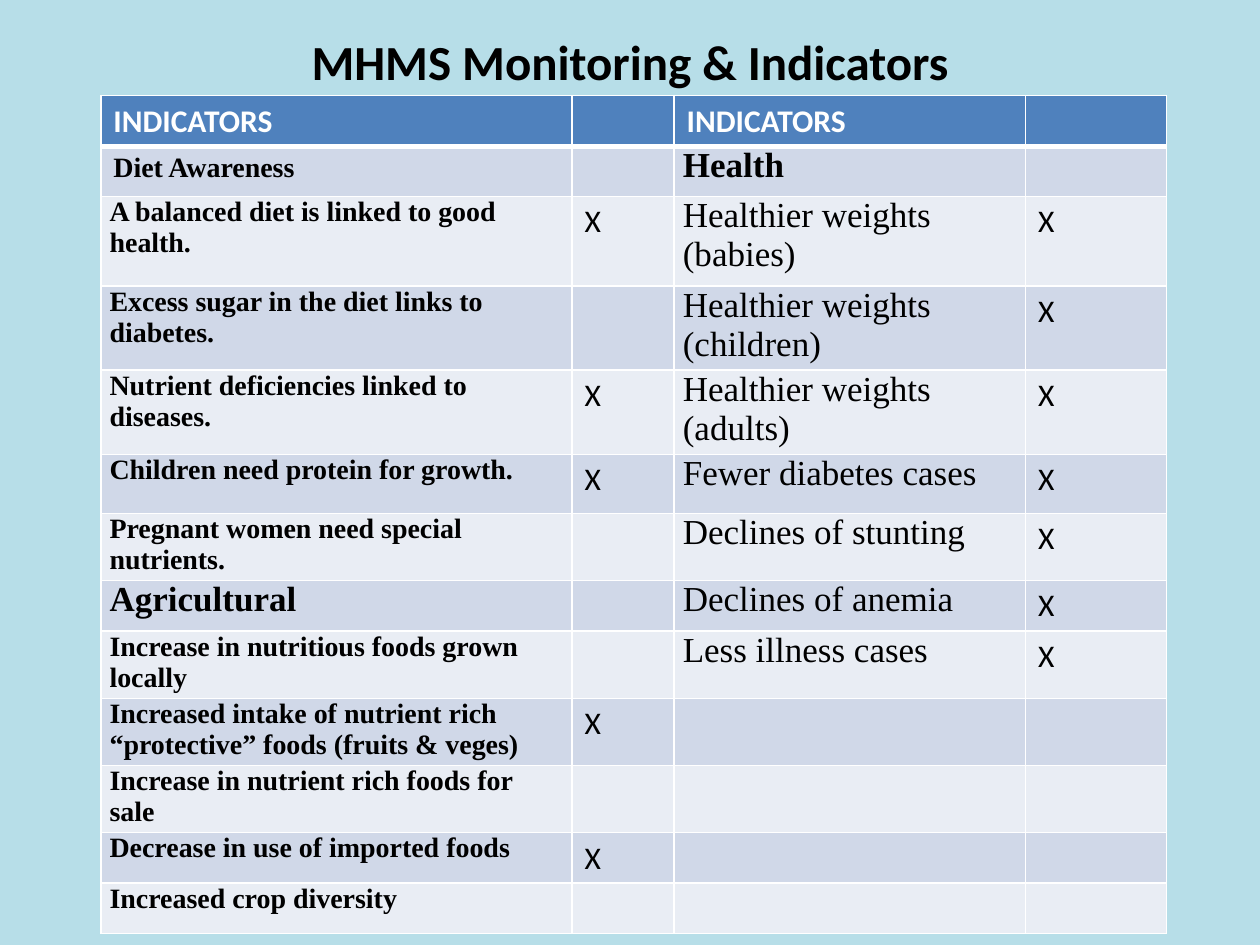
import pptx
import pptx.util
import pptx.dml.color
import pptx.enum.text
import pptx.oxml.ns
from lxml import etree
from pptx.util import Inches

COLORS = {"background": "B7DEE8", "header": "4F81BD", "odd": "D0D8E8",
          "even": "E9EDF4", "white": "FFFFFF", "black": "000000"}

# Text formats
TITLE = {"name": "Calibri", "size": 28, "bold": True, "color": "black"}
HEADER = {"name": "Calibri", "size": 18, "bold": True, "color": "white"}
MARK = {"name": "Calibri", "size": 18, "bold": False, "color": "black"}
PRACTICE = {"name": "Times New Roman", "size": 16, "bold": True, "color": "black"}
HEALTH = {"name": "Times New Roman", "size": 20, "bold": False, "color": "black"}
SECTION = {"name": "Times New Roman", "size": 20, "bold": True, "color": "black"}

COL_WIDTHS = [3.74, 0.81, 2.79, 1.12]
# Row height, then the four cell texts
ROWS = [
    (0.37, "INDICATORS", "", "INDICATORS", ""),
    (0.37, "Diet Awareness", "", "Health", ""),
    (0.71, "A balanced diet is linked to good health.", "X", "Healthier weights (babies)", "X"),
    (0.47, "Excess sugar in the diet links to diabetes.", "", "Healthier weights (children)", "X"),
    (0.47, "Nutrient deficiencies linked to diseases.", "X", "Healthier weights (adults)", "X"),
    (0.47, "Children need protein for growth.", "X", "Fewer diabetes cases", "X"),
    (0.47, "Pregnant women need special nutrients.", "", "Declines of stunting", "X"),
    (0.37, "Agricultural", "", "Declines of anemia", "X"),
    (0.37, "Increase in nutritious foods grown locally", "", "Less illness cases", "X"),
    (0.37, "Increased intake of nutrient rich “protective” foods (fruits & veges)", "X", "", ""),
    (0.37, "Increase in nutrient rich foods for sale", "", "", ""),
    (0.37, "Decrease in use of imported foods", "X", "", ""),
    (0.37, "Increased crop diversity", "", "", ""),
]


def rgb(name):
    return pptx.dml.color.RGBColor.from_string(COLORS[name])


def write_text(tf, text, fmt):
    p = tf.paragraphs[0]
    r = p.add_run()
    r.text = text
    for key, value in fmt.items():
        if key == "color":
            r.font.color.rgb = rgb(value)
        else:
            setattr(r.font, key, pptx.util.Pt(value) if key == "size" else value)
    return p


def add_title(s, text):
    tf = s.shapes.add_textbox(Inches(0.5), Inches(-0.14), Inches(9), Inches(1.25)).text_frame
    tf.word_wrap = True
    tf.vertical_anchor = pptx.enum.text.MSO_ANCHOR.MIDDLE
    p = write_text(tf, text, TITLE)
    p.alignment = pptx.enum.text.PP_ALIGN.CENTER


def set_borders(cell, widths):
    tcPr = cell._tc.get_or_add_tcPr()
    for side, width in widths.items():
        ln = etree.SubElement(tcPr, pptx.oxml.ns.qn(f"a:ln{side}"), w=str(pptx.util.Pt(width)))
        fill = etree.SubElement(ln, pptx.oxml.ns.qn("a:solidFill"))
        etree.SubElement(fill, pptx.oxml.ns.qn("a:srgbClr"), val=COLORS["white"])


def cell_format(row, col, text):
    if row == 0:
        return HEADER
    if col in (1, 3):
        return MARK
    if text in ("Health", "Agricultural"):
        return SECTION
    return PRACTICE if col == 0 else HEALTH


def fill_cell(cell, row, col, text):
    # Borders come before the fill; a thick rule separates the header
    set_borders(cell, {"L": 1, "R": 1, "T": 3 if row == 1 else 1, "B": 3 if row == 0 else 1})
    cell.fill.solid()
    cell.fill.fore_color.rgb = rgb("header" if row == 0 else "odd" if row % 2 else "even")
    if not text:
        return
    fmt = cell_format(row, col, text)
    write_text(cell.text_frame, text, fmt)
    if fmt in (PRACTICE, HEALTH, SECTION) and text != "Diet Awareness":
        margins = {"margin_left": 0.07, "margin_right": 0.07, "margin_top": 0, "margin_bottom": 0}
        for key, value in margins.items():
            setattr(cell, key, Inches(value))


def add_indicator_table(s):
    height = sum(row[0] for row in ROWS)
    table = s.shapes.add_table(len(ROWS), len(COL_WIDTHS), Inches(0.8), Inches(0.76),
                               Inches(sum(COL_WIDTHS)), Inches(height)).table
    for column, width in zip(table.columns, COL_WIDTHS):
        column.width = Inches(width)
    for i, (row_height, *texts) in enumerate(ROWS):
        table.rows[i].height = Inches(row_height)
        for j, text in enumerate(texts):
            fill_cell(table.cell(i, j), i, j, text)


def main():
    prs = pptx.Presentation()
    prs.slide_width, prs.slide_height = Inches(10), Inches(7.5)
    s = prs.slides.add_slide(prs.slide_layouts[6])
    s.background.fill.solid()
    s.background.fill.fore_color.rgb = rgb("background")
    add_title(s, "MHMS Monitoring & Indicators")
    add_indicator_table(s)
    prs.save("out.pptx")


if __name__ == "__main__":
    main()
